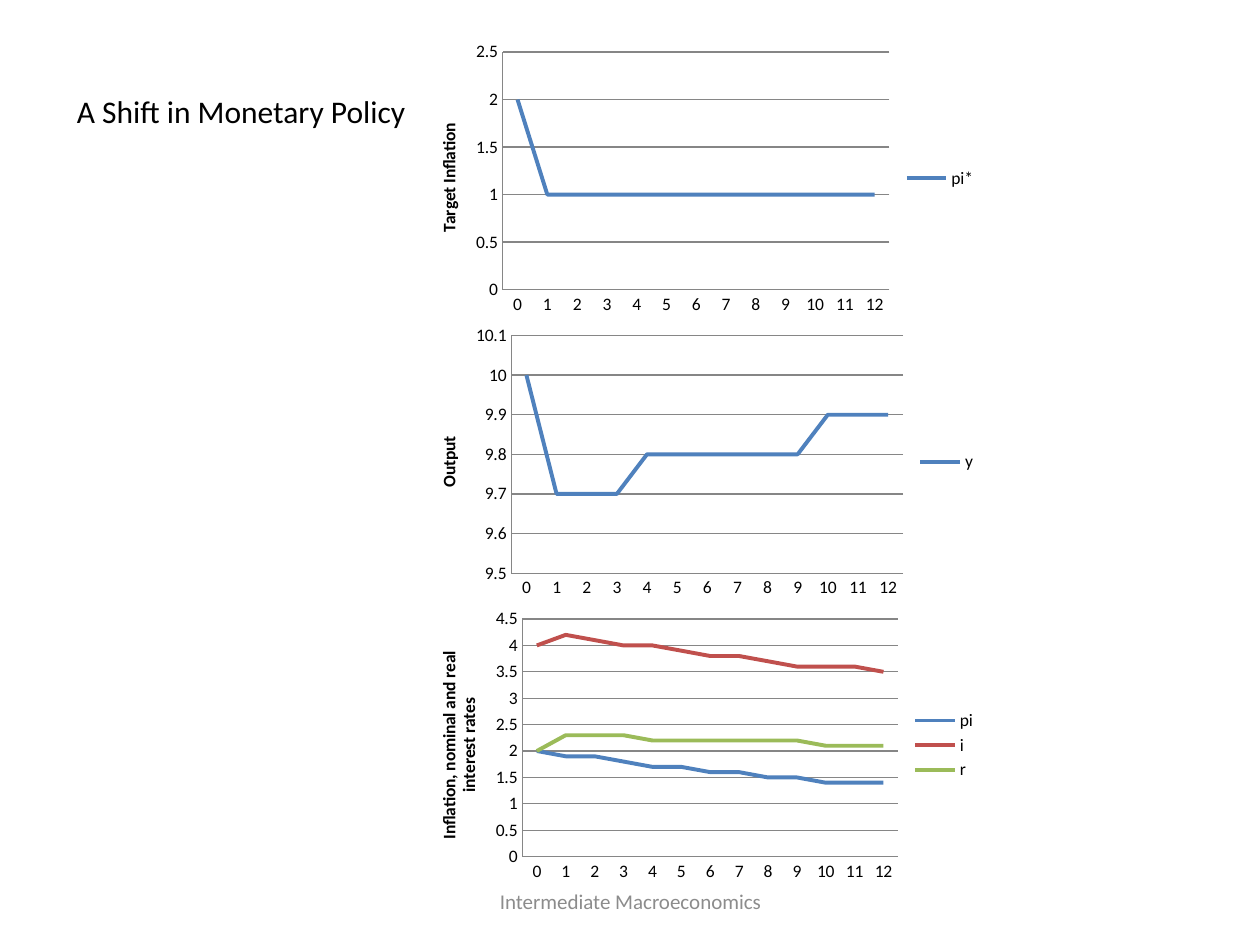
from pptx import Presentation
from pptx import util as u
from pptx.chart import data
from pptx.dml.color import RGBColor
from pptx.enum import chart as ch, text

BLACK = RGBColor(0, 0, 0)
GRAY = RGBColor(0x8C, 0x8C, 0x8C)
RULE = RGBColor(0x86, 0x86, 0x86)
BLUE = RGBColor(0x4F, 0x81, 0xBD)
RED = RGBColor(0xC0, 0x50, 0x4D)
GREEN = RGBColor(0x9B, 0xBB, 0x59)
FACE = "Calibri"

PLOTS = [
    ("Target Inflation", (0, 2.5, 0.5), [("pi*", BLUE, [2] + [1] * 12)]),
    ("Output", (9.5, 10.1, 0.1), [
        ("y", BLUE, [10] + [9.7] * 3 + [9.8] * 6 + [9.9] * 3),
    ]),
    ("Inflation, nominal and real interest rates", (0, 4.5, 0.5), [
        ("pi", BLUE, [2, 1.9, 1.9, 1.8, 1.7, 1.7, 1.6, 1.6, 1.5, 1.5, 1.4, 1.4, 1.4]),
        ("i", RED, [4, 4.2, 4.1, 4, 4, 3.9, 3.8, 3.8, 3.7, 3.6, 3.6, 3.6, 3.5]),
        ("r", GREEN, [2] + [2.3] * 3 + [2.2] * 6 + [2.1] * 3),
    ]),
]


def write(frame, words, size=10, color=BLACK, bold=False, align=None):
    para = frame.paragraphs[0]
    para.alignment = align
    run = para.add_run()
    run.text = words
    run.font.name = FACE
    run.font.size = u.Pt(size)
    run.font.bold = bold
    run.font.color.rgb = color


def stroke(line, color, width=0.75):
    line.color.rgb = color
    line.width = u.Pt(width)


class Deck:
    def __init__(self):
        self.prs = Presentation()
        self.prs.slide_width = u.Inches(10)
        self.prs.slide_height = u.Inches(7.5)
        self.slide = self.prs.slides.add_slide(self.prs.slide_layouts[5])

    def title(self, words, left, top, width, height):
        box = self.slide.shapes.title
        box.left, box.top = u.Inches(left), u.Inches(top)
        box.width, box.height = u.Inches(width), u.Inches(height)
        frame = box.text_frame
        frame.vertical_anchor = text.MSO_ANCHOR.TOP
        frame.auto_size = text.MSO_AUTO_SIZE.NONE
        write(frame, words, size=18, align=text.PP_ALIGN.LEFT)

    def label(self, words, left, top, width, height):
        box = self.slide.shapes.add_textbox(
            u.Inches(left), u.Inches(top), u.Inches(width), u.Inches(height))
        frame = box.text_frame
        frame.word_wrap = True
        frame.vertical_anchor = text.MSO_ANCHOR.MIDDLE
        write(frame, words, size=12, color=GRAY, align=text.PP_ALIGN.CENTER)

    def plot(self, name, scale, lines, left, top, width, height):
        feed = data.CategoryChartData()
        feed.categories = [str(n) for n in range(13)]
        for key, _, vals in lines:
            feed.add_series(key, vals)
        chart = self.slide.shapes.add_chart(
            ch.XL_CHART_TYPE.LINE, u.Inches(left), u.Inches(top),
            u.Inches(width), u.Inches(height), feed).chart
        chart.has_title = False
        chart.font.name = FACE
        chart.font.size = u.Pt(10)
        chart.font.color.rgb = BLACK
        chart.has_legend = True
        chart.legend.position = ch.XL_LEGEND_POSITION.RIGHT
        chart.legend.include_in_layout = False
        for axis in (chart.category_axis, chart.value_axis):
            axis.major_tick_mark = ch.XL_TICK_MARK.NONE
            axis.minor_tick_mark = ch.XL_TICK_MARK.NONE
            stroke(axis.format.line, RULE)
        axis = chart.value_axis
        axis.minimum_scale, axis.maximum_scale, axis.major_unit = scale
        axis.tick_labels.number_format = "General"
        axis.tick_labels.number_format_is_linked = False
        axis.has_major_gridlines = True
        stroke(axis.major_gridlines.format.line, RULE)
        write(axis.axis_title.text_frame, name, bold=True)
        chart.plots[0].vary_by_categories = False
        for series, (_, color, _) in zip(chart.plots[0].series, lines):
            series.smooth = False
            series.marker.style = ch.XL_MARKER_STYLE.NONE
            stroke(series.format.line, color, 2.25)


def main():
    deck = Deck()
    deck.label("Intermediate Macroeconomics", 3.42, 6.95, 3.17, 0.4)
    high = 2.25
    for row, (name, scale, lines) in enumerate(PLOTS):
        deck.plot(name, scale, lines, 3.27, 0.29 + row * high, 4.58, high)
    deck.title("A Shift in Monetary Policy", 0.51, 0.68, 2.99, 0.4)
    deck.prs.save("out.pptx")


if __name__ == "__main__":
    main()
